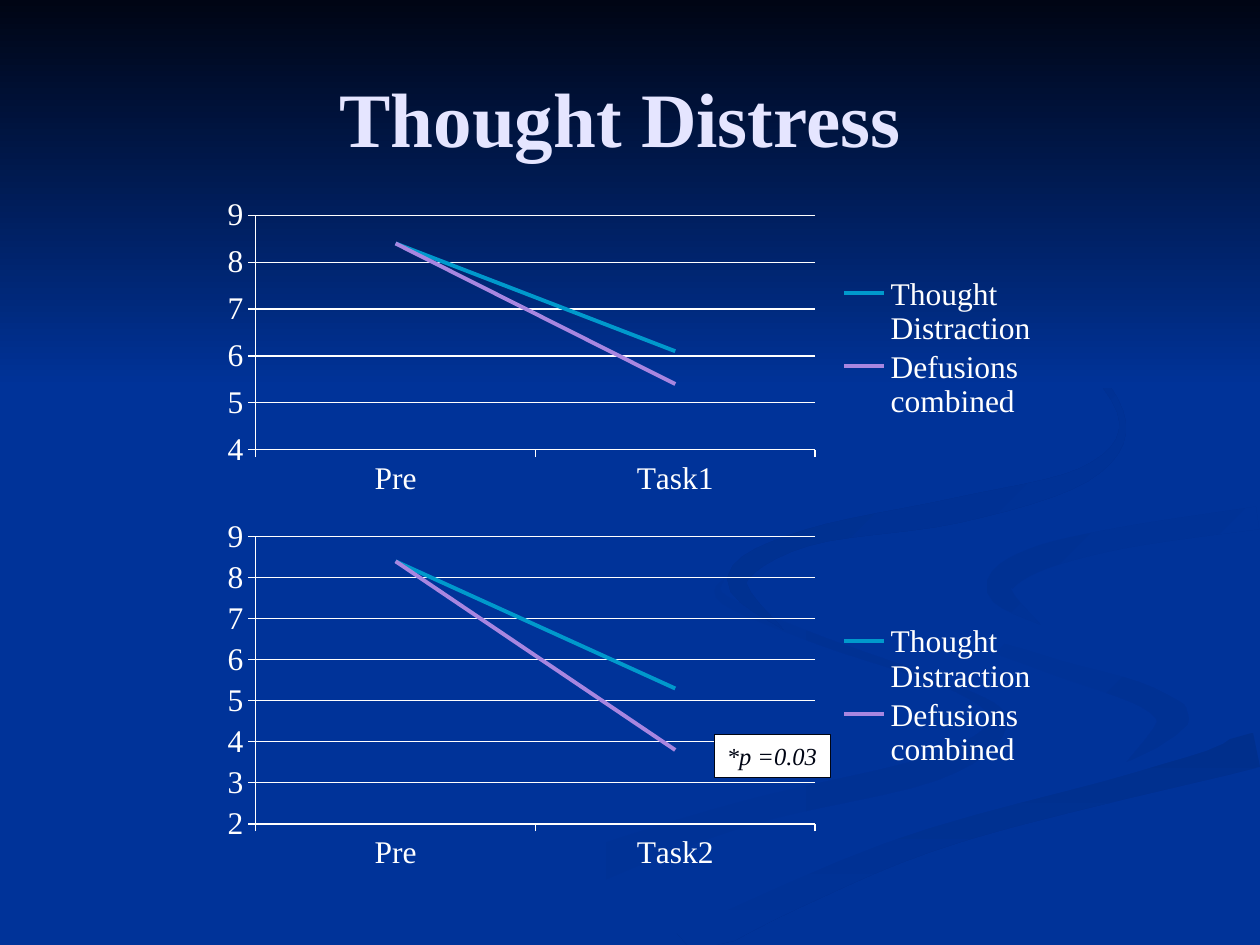
from collections import namedtuple
from math import hypot

from lxml.etree import SubElement
from pptx import Presentation
from pptx.chart.data import CategoryChartData
from pptx.dml.color import RGBColor
from pptx.enum.chart import XL_CHART_TYPE, XL_LEGEND_POSITION, XL_TICK_MARK
from pptx.enum.shapes import MSO_SHAPE
from pptx.enum.text import MSO_ANCHOR, MSO_AUTO_SIZE, PP_ALIGN
from pptx.oxml.ns import qn
from pptx.util import Inches, Pt

BLUE = RGBColor(0x00, 0x33, 0x99)
NAVY = RGBColor(0x00, 0x05, 0x14)
WHITE = RGBColor(0xFF, 0xFF, 0xFF)
LAVENDER = RGBColor(0xE5, 0xE5, 0xFF)
TEAL = RGBColor(0x00, 0x99, 0xCC)
PURPLE = RGBColor(0xA8, 0x86, 0xE0)
SHADE = RGBColor(0x00, 0x31, 0x93)
DEEP_SHADE = RGBColor(0x00, 0x2F, 0x8C)

FONT = "Times New Roman"
SLIDE_WIDTH, SLIDE_HEIGHT = 10, 7.5
CHART_LEFT, CHART_WIDTH = 1.67, 6.67
PLOT_LEFT, PLOT_TOP, PLOT_WIDTH = 0.36, 0.18, 4.44
PLOT_VERTICAL_MARGIN = 0.61
LEGEND_LEFT, LEGEND_WIDTH, LEGEND_HEIGHT = 4.92, 1.7, 1.2
PRE_SCORE = 8.4
SERIES_COLORS = {"Thought Distraction": TEAL, "Defusions combined": PURPLE}
STEPS_PER_SPAN = 6

Station = namedtuple("Station", "x y thickness")
Ribbon = namedtuple("Ribbon", "start_color end_color angle stations")

LOWER_CURL = Ribbon(BLUE, SHADE, 0, [
    Station(5.75, 4.59, 0), Station(5.75, 4.76, 0.07), Station(6.5, 5.08, 0.07),
    Station(7.6, 5.47, 0.05), Station(7.92, 5.75, 0.14), Station(7.4, 6.1, 0.2),
    Station(5.9, 6.46, 0.2), Station(4.5, 6.95, 0.3), Station(3.3, 7.49, 0.4)])
INNER_CURL = Ribbon(BLUE, SHADE, 45, [
    Station(7.24, 4.64, 0), Station(7.5, 4.98, 0.05), Station(8.3, 5.26, 0.14),
    Station(9.1, 5.52, 0.2), Station(9.3, 5.75, 0.25), Station(8.94, 6.05, 0)])
LOWER_BAND = Ribbon(DEEP_SHADE, BLUE, 90, [
    Station(5.37, 7.49, 0.4), Station(6.3, 7.06, 0.3),
    Station(7.65, 6.57, 0.2), Station(9.98, 5.95, 0.28)])
WIDE_RIBBON = Ribbon(BLUE, BLUE, 0, [
    Station(9.99, 3.95, 0.15), Station(8.5, 4.18, 0.13), Station(7.53, 4.62, 0.5),
    Station(8.3, 5.1, 0.2), Station(9.2, 5.34, 0.25), Station(9.7, 5.65, 0.4),
    Station(9, 6.08, 0.1), Station(7, 6.62, 0.15), Station(4.9, 7.49, 0.25)])
RIGHT_CURL = Ribbon(SHADE, BLUE, 45, [
    Station(9.98, 4.11, 0.18), Station(8.9, 4.27, 0.17), Station(8.2, 4.45, 0.2),
    Station(7.93, 4.68, 0.2), Station(8.26, 4.96, 0)])
UPPER_CURL = Ribbon(DEEP_SHADE, BLUE, 45, [
    Station(7.62, 2.33, 0), Station(8.5, 2.78, 0.06), Station(8.91, 3.35, 0.05),
    Station(8.6, 3.77, 0.12), Station(7.6, 4.05, 0.2), Station(6.4, 4.27, 0.13),
    Station(5.85, 4.6, 0.16), Station(6.22, 5, 0)])
RIBBONS = [LOWER_CURL, INNER_CURL, LOWER_BAND, WIDE_RIBBON, RIGHT_CURL, UPPER_CURL]


def apply_format(target, values):
    for name, value in values.items():
        setattr(target, name, value)


def spline_value(before, start, end, after, fraction):
    linear = end - before
    quadratic = 2 * before - 5 * start + 4 * end - after
    cubic = 3 * (start - end) + after - before
    return start + fraction * (linear + fraction * (quadratic + fraction * cubic)) / 2


def smooth_stations(stations):
    padded = [stations[0], *stations, stations[-1]]
    smooth = []
    for neighbours in zip(padded, padded[1:], padded[2:], padded[3:]):
        for step in range(STEPS_PER_SPAN):
            fraction = step / STEPS_PER_SPAN
            smooth.append(Station(*(spline_value(*values, fraction)
                                    for values in zip(*neighbours))))
    return [*smooth, stations[-1]]


def ribbon_outline(stations):
    centres = smooth_stations(stations)
    left_edge, right_edge = [], []
    for before, centre, after in zip([centres[0], *centres], centres,
                                     [*centres[1:], centres[-1]]):
        run, rise = after.x - before.x, after.y - before.y
        half_width = max(centre.thickness, 0) / 2 / hypot(run, rise)
        for edge, side in ((left_edge, half_width), (right_edge, -half_width)):
            edge.append((min(centre.x - side * rise, SLIDE_WIDTH),
                         min(centre.y + side * run, SLIDE_HEIGHT)))
    return left_edge + right_edge[::-1]


def fill_gradient(shape, start_color, end_color, clockwise_angle):
    shape.shadow.inherit = False
    shape.line.fill.background()
    shape.fill.gradient()
    shape.fill.gradient_angle = (360 - clockwise_angle) % 360
    for stop, color, position in zip(shape.fill.gradient_stops,
                                     (start_color, end_color), (0, 1)):
        stop.position = position
        stop.color.rgb = color


def add_ribbon(group, ribbon):
    points = [(Inches(x), Inches(y)) for x, y in ribbon_outline(ribbon.stations)]
    builder = group.shapes.build_freeform(*points[0])
    builder.add_line_segments(points[1:], close=True)
    fill_gradient(builder.convert_to_shape(), ribbon.start_color,
                  ribbon.end_color, ribbon.angle)


def add_backdrop(slide):
    slide.background.fill.solid()
    slide.background.fill.fore_color.rgb = BLUE
    group = slide.shapes.add_group_shape()
    for ribbon in RIBBONS:
        add_ribbon(group, ribbon)
    sky = group.shapes.add_shape(MSO_SHAPE.RECTANGLE, 0, 0,
                                 Inches(SLIDE_WIDTH), Inches(3.08))
    fill_gradient(sky, NAVY, BLUE, 90)
    slide.shapes.title.element.addprevious(group.element)


def write_text(shape, text, alignment, font_values, color):
    paragraph = shape.text_frame.paragraphs[0]
    paragraph.alignment = alignment
    run = paragraph.add_run()
    run.text = text
    apply_format(run.font, {"name": FONT, **font_values})
    run.font.color.rgb = color


def add_title(slide, text):
    title = slide.shapes.title
    apply_format(title, {"left": Inches(0.5), "top": Inches(0.3),
                         "width": Inches(9), "height": Inches(1.25)})
    title.text_frame.vertical_anchor = MSO_ANCHOR.MIDDLE
    write_text(title, text, PP_ALIGN.CENTER, {"size": Pt(44), "bold": True}, LAVENDER)


def place_in_chart(element, chart_height, bounds, inner=False):
    layout = element.find(qn("c:layout"))
    if layout is None:
        layout = SubElement(element, qn("c:layout"))
        position = element.find(qn("c:legendPos"))
        if position is None:
            element.insert(0, layout)
        else:
            position.addnext(layout)
    manual = SubElement(layout, qn("c:manualLayout"))
    settings = [("layoutTarget", "inner")] if inner else []
    settings += [("xMode", "edge"), ("yMode", "edge")]
    for name, length, whole in zip("xywh", bounds, (CHART_WIDTH, chart_height) * 2):
        settings.append((name, length / whole))
    for name, value in settings:
        SubElement(manual, qn(f"c:{name}")).set("val", str(value))


def style_line(line, color, width):
    line.color.rgb = color
    line.width = Pt(width)


def add_distress_chart(slide, top, height, task, minimum, task_scores):
    data = CategoryChartData()
    data.categories = ["Pre", task]
    for name, score in zip(SERIES_COLORS, task_scores):
        data.add_series(name, (PRE_SCORE, score))
    chart = slide.shapes.add_chart(XL_CHART_TYPE.LINE, Inches(CHART_LEFT), Inches(top),
                                   Inches(CHART_WIDTH), Inches(height), data).chart
    apply_format(chart, {"has_title": False, "has_legend": True})
    apply_format(chart.font, {"name": FONT, "size": Pt(18)})
    chart.font.color.rgb = WHITE
    apply_format(chart.legend, {"position": XL_LEGEND_POSITION.RIGHT,
                                "include_in_layout": False})
    apply_format(chart.value_axis, {"minimum_scale": minimum, "maximum_scale": 9,
                                    "major_unit": 1, "has_major_gridlines": True})
    style_line(chart.value_axis.major_gridlines.format.line, WHITE, 0.75)
    for axis in (chart.category_axis, chart.value_axis):
        axis.major_tick_mark = XL_TICK_MARK.OUTSIDE
        style_line(axis.format.line, WHITE, 0.75)
    chart.plots[0].vary_by_categories = False
    for series in chart.plots[0].series:
        series.smooth = False
        style_line(series.format.line, SERIES_COLORS[series.name], 2.25)
    plot_bounds = (PLOT_LEFT, PLOT_TOP, PLOT_WIDTH, height - PLOT_VERTICAL_MARGIN)
    legend_bounds = (LEGEND_LEFT, (height - LEGEND_HEIGHT) / 2, LEGEND_WIDTH, LEGEND_HEIGHT)
    place_in_chart(chart.element.find(f".//{qn('c:plotArea')}"), height, plot_bounds, True)
    place_in_chart(chart.element.find(f".//{qn('c:legend')}"), height, legend_bounds)


def add_significance_label(slide, text):
    label = slide.shapes.add_shape(MSO_SHAPE.RECTANGLE, Inches(5.67), Inches(5.83),
                                   Inches(0.92), Inches(0.34))
    label.shadow.inherit = False
    label.fill.solid()
    label.fill.fore_color.rgb = WHITE
    style_line(label.line, NAVY, 0.75)
    apply_format(label.text_frame, {"word_wrap": False,
                                    "auto_size": MSO_AUTO_SIZE.SHAPE_TO_FIT_TEXT})
    write_text(label, text, PP_ALIGN.LEFT, {"size": Pt(14), "italic": True}, NAVY)


def main():
    presentation = Presentation()
    apply_format(presentation, {"slide_width": Inches(SLIDE_WIDTH),
                                "slide_height": Inches(SLIDE_HEIGHT)})
    slide = presentation.slides.add_slide(presentation.slide_layouts[5])
    add_backdrop(slide)
    add_title(slide, "Thought Distress ")
    add_distress_chart(slide, 1.53, 2.47, "Task1", 4, (6.1, 5.4))
    add_distress_chart(slide, 4.08, 2.89, "Task2", 2, (5.3, 3.8))
    add_significance_label(slide, "*p =0.03")
    presentation.save("out.pptx")


if __name__ == "__main__":
    main()
